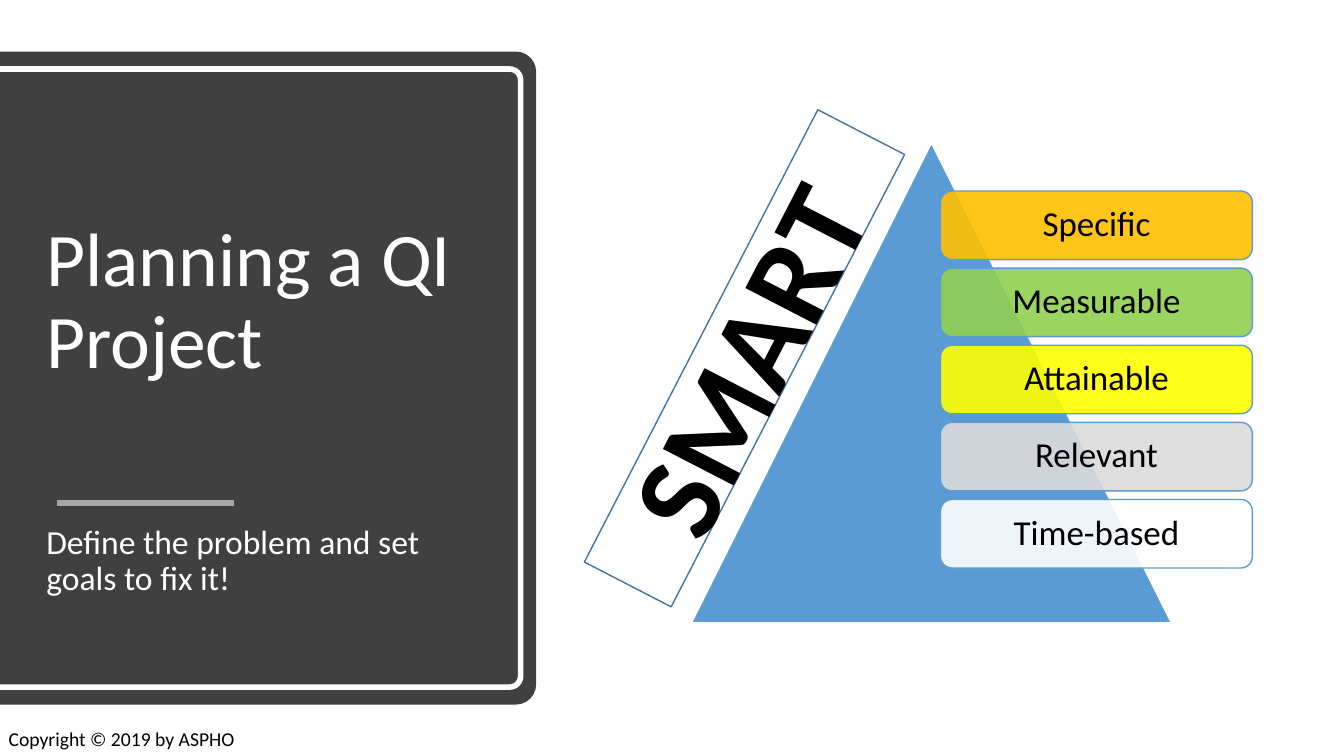
from pptx import Presentation
from pptx.dml.color import RGBColor
from pptx.enum.shapes import MSO_CONNECTOR, MSO_SHAPE
from pptx.enum.text import MSO_ANCHOR, PP_ALIGN
from pptx.oxml.ns import qn
from pptx.util import Pt
from lxml.etree import SubElement

FONT = "Calibri"
WHITE = RGBColor(0xFF, 0xFF, 0xFF)
BLACK = RGBColor(0, 0, 0)
DARK = RGBColor(0x40, 0x40, 0x40)
GREY = RGBColor(0xA6, 0xA6, 0xA6)
BLUE = RGBColor(0x5B, 0x9B, 0xD5)
NAVY = RGBColor(0x43, 0x73, 0x9E)
GOALS = [
    ("Specific", RGBColor(0xFF, 0xC0, 0x00)),
    ("Measurable", RGBColor(0x92, 0xD0, 0x50)),
    ("Attainable", RGBColor(0xFF, 0xFF, 0x00)),
    ("Relevant", RGBColor(0xDB, 0xDB, 0xDB)),
    ("Time-based", WHITE),
]


def add_form(slide, kind, box, fill=None, line=None, width=1):
    """Add a preset shape with a plain fill and line."""
    form = slide.shapes.add_shape(kind, *map(Pt, box))
    form.shadow.inherit = False
    if fill is None:
        form.fill.background()
    else:
        form.fill.solid()
        form.fill.fore_color.rgb = fill
    if line is None:
        form.line.fill.background()
    else:
        form.line.color.rgb = line
        form.line.width = Pt(width)
    return form


def set_text(form, text, size, color, anchor, align=PP_ALIGN.LEFT, space=0.9, bold=False):
    """Write one paragraph into a shape and format it."""
    frame = form.text_frame
    frame.word_wrap = True
    frame.vertical_anchor = anchor
    frame.text = text
    para = frame.paragraphs[0]
    para.alignment = align
    para.line_spacing = space
    font = para.runs[0].font
    font.name, font.size, font.bold = FONT, Pt(size), bold
    font.color.rgb = color


def add_label(slide, box, *style, **more):
    """Add a text box with formatted text."""
    set_text(slide.shapes.add_textbox(*map(Pt, box)), *style, **more)


def add_tab(slide, box, curve, **style):
    """Add a block with rounded right corners that fills the upright box."""
    left, top, wide, high = box
    shift = (wide - high) / 2
    tab = add_form(slide, MSO_SHAPE.ROUND_2_SAME_RECTANGLE,
                   (left + shift, top - shift, high, wide), **style)
    tab.rotation = 90
    tab.adjustments[0] = curve
    tab.adjustments[1] = 0


def add_panel(slide, left, top, wide, high):
    """Draw the dark title panel with its frame, rule and texts."""
    add_tab(slide, (left, top, wide, high), 0.038, fill=DARK)
    add_tab(slide, (left - 2.5, top + 12.5, wide - 8.6, high - 25), 0.021,
            line=WHITE, width=4)
    add_label(slide, (left + 26, top + 51.8, 312.5, 255.6),
              "Planning a QI Project", 54, WHITE, MSO_ANCHOR.MIDDLE)
    add_label(slide, (left + 26, top + 334.7, 312.5, 98),
              "Define the problem and set goals to fix it!", 24, WHITE, MSO_ANCHOR.TOP)
    start, level = left + 41, top + 322.5
    rule = slide.shapes.add_connector(
        MSO_CONNECTOR.STRAIGHT, Pt(start), Pt(level), Pt(start + 126), Pt(level))
    rule.line.color.rgb = GREY
    rule.line.width = Pt(4)
    SubElement(rule.line._get_or_add_ln().getparent(), qn("a:effectLst"))


def add_goals(slide, left, top, side):
    """Draw the triangle, its stack of goals and the slanted heading."""
    add_form(slide, MSO_SHAPE.ISOSCELES_TRIANGLE, (left, top, side, side), BLUE, WHITE)
    high = side / 7
    for row, (goal, color) in enumerate(GOALS):
        box = (left + side / 2 + 6.5, top + side / 10 + row * high * 1.125,
               side * 0.65, high)
        chip = add_form(slide, MSO_SHAPE.ROUNDED_RECTANGLE, box, color, BLUE)
        tint = chip.fill._xPr.find(".//" + qn("a:srgbClr"))
        SubElement(tint, qn("a:alpha")).set("val", "90000")
        set_text(chip, goal, 25, BLACK, MSO_ANCHOR.MIDDLE, PP_ALIGN.CENTER)
    sign = add_form(slide, MSO_SHAPE.RECTANGLE,
                    (left - 144, top + 118.8, 363.6, 69.8), line=NAVY)
    sign.rotation = 297.3
    set_text(sign, "SMART", 88, BLACK, MSO_ANCHOR.MIDDLE, PP_ALIGN.CENTER, 1, True)


def main():
    """Build the slide and save it."""
    deck = Presentation()
    deck.slide_width, deck.slide_height = Pt(960), Pt(540)
    slide = deck.slides.add_slide(deck.slide_layouts[6])
    add_panel(slide, 0, 36.8, 383, 466.5)
    add_goals(slide, 494, 102.2, 342.7)
    add_label(slide, (-1, 515.6, 178.6, 24.4), "Copyright © 2019 by ASPHO",
              14, BLACK, MSO_ANCHOR.TOP, space=1)
    deck.save("out.pptx")


if __name__ == "__main__":
    main()
